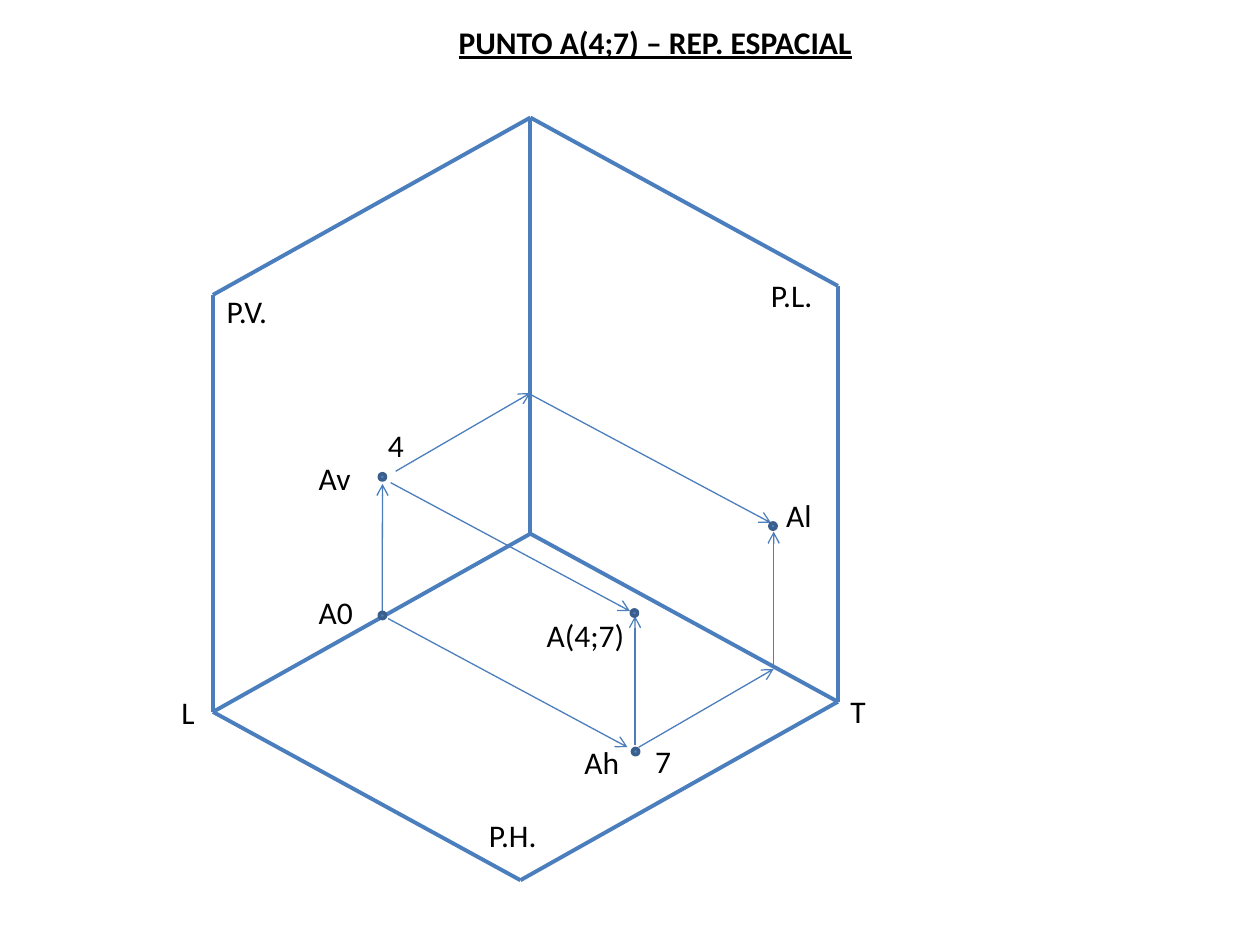
from pptx import Presentation
from pptx.dml.color import RGBColor
from pptx.enum.shapes import MSO_CONNECTOR, MSO_SHAPE
from pptx.enum.text import MSO_AUTO_SIZE, PP_ALIGN
from pptx.oxml.ns import qn
from pptx.util import Pt
from lxml.etree import SubElement

LINE_BLUE = "4B7EBC"
DOT_BLUE = "4F81BD"
DOT_EDGE = "3A5F8C"
BLACK = "000000"
DOT_SIZE = 3.6

LEFT_TOP, LEFT_BOTTOM = (121.7, 168.5), (121.7, 406.8)
BACK_TOP, BACK_BOTTOM = (303.1, 67.2), (303.1, 305)
RIGHT_TOP, RIGHT_BOTTOM = (478.8, 163.4), (478.8, 401)
FRONT = (297.4, 503)

PLANE_EDGES = [
    (LEFT_TOP, BACK_TOP),
    (BACK_TOP, BACK_BOTTOM),
    (LEFT_TOP, LEFT_BOTTOM),
    (LEFT_BOTTOM, BACK_BOTTOM),
    (BACK_BOTTOM, RIGHT_BOTTOM),
    (RIGHT_TOP, RIGHT_BOTTOM),
    (BACK_TOP, RIGHT_TOP),
    (FRONT, RIGHT_BOTTOM),
    (LEFT_BOTTOM, FRONT),
]

PROJECTIONS = [
    ((218.4, 350), (218.6, 276.5)),
    ((221.8, 353.5), (358.6, 427)),
    ((362.9, 425.5), (362.9, 352.1)),
    ((223.2, 275.8), (360, 349.2)),
    ((226.1, 269.3), (303.1, 224.6)),
    ((303.1, 225.4), (440.6, 298.8)),
    ((365, 427), (442.1, 382.3)),
    ((442.1, 380.2), (442.1, 303.8)),
]

POINTS = [(218.5, 351.7), (218.5, 272.5), (363.2, 429.5), (362.5, 350.3), (441.7, 300.6)]

LABELS = [
    ("P.V.", 122.4, 163.4, 90.7),
    ("P.H.", 272.2, 463, 51.1),
    ("P.L.", 433.4, 154.1, 72.7),
    ("L", 96.5, 392.4, 51.1),
    ("T", 478.8, 391.7, 33.1),
    ("A0", 175, 335.5, 45.4),
    ("4", 214.6, 239.8, 22.3),
    ("Av", 175, 258.5, 39.6),
    ("Ah", 326.9, 421.2, 39.6),
    ("7", 367.2, 420.5, 42.5),
    ("Al", 442.1, 280.1, 39.6),
    ("A(4;7)", 305.3, 348.5, 62.6),
]


def color(hex_string):
    return RGBColor.from_string(hex_string)


def add_line(slide, start, end, width, arrow=False):
    line = slide.shapes.add_connector(
        MSO_CONNECTOR.STRAIGHT, *(Pt(value) for value in start + end)
    )
    line.line.color.rgb = color(LINE_BLUE)
    line.line.width = Pt(width)
    properties = line._element.spPr
    if arrow:
        SubElement(properties.find(qn("a:ln")), qn("a:tailEnd"), type="arrow")
    SubElement(properties, qn("a:effectLst"))


def add_point(slide, x, y):
    point = slide.shapes.add_shape(
        MSO_SHAPE.FLOWCHART_CONNECTOR,
        Pt(x - DOT_SIZE / 2), Pt(y - DOT_SIZE / 2), Pt(DOT_SIZE), Pt(DOT_SIZE),
    )
    point.shadow.inherit = False
    point.fill.solid()
    point.fill.fore_color.rgb = color(DOT_BLUE)
    point.line.color.rgb = color(DOT_EDGE)
    point.line.width = Pt(2)


def add_label(slide, text, left, top, width):
    frame = slide.shapes.add_textbox(Pt(left), Pt(top), Pt(width), Pt(29)).text_frame
    frame.word_wrap = True
    frame.auto_size = MSO_AUTO_SIZE.SHAPE_TO_FIT_TEXT
    paragraph = frame.paragraphs[0]
    paragraph.text = text
    paragraph.font.name = "Calibri"
    paragraph.font.size = Pt(18)
    paragraph.font.color.rgb = color(BLACK)
    return paragraph


def add_title(slide, text):
    title = add_label(slide, text, 54, 9.4, 640.8)
    title.alignment = PP_ALIGN.CENTER
    title.font.bold = True
    title.font.underline = True


def main():
    """Build the spatial representation of point A(4;7) on three planes."""
    presentation = Presentation()
    presentation.slide_width, presentation.slide_height = Pt(720), Pt(540)
    slide = presentation.slides.add_slide(presentation.slide_layouts[6])

    add_title(slide, "PUNTO A(4;7) – REP. ESPACIAL")
    for start, end in PLANE_EDGES:
        add_line(slide, start, end, 2.25)
    for start, end in PROJECTIONS:
        add_line(slide, start, end, 0.75, arrow=True)
    for x, y in POINTS:
        add_point(slide, x, y)
    for label in LABELS:
        add_label(slide, *label)

    presentation.save("out.pptx")


if __name__ == "__main__":
    main()
